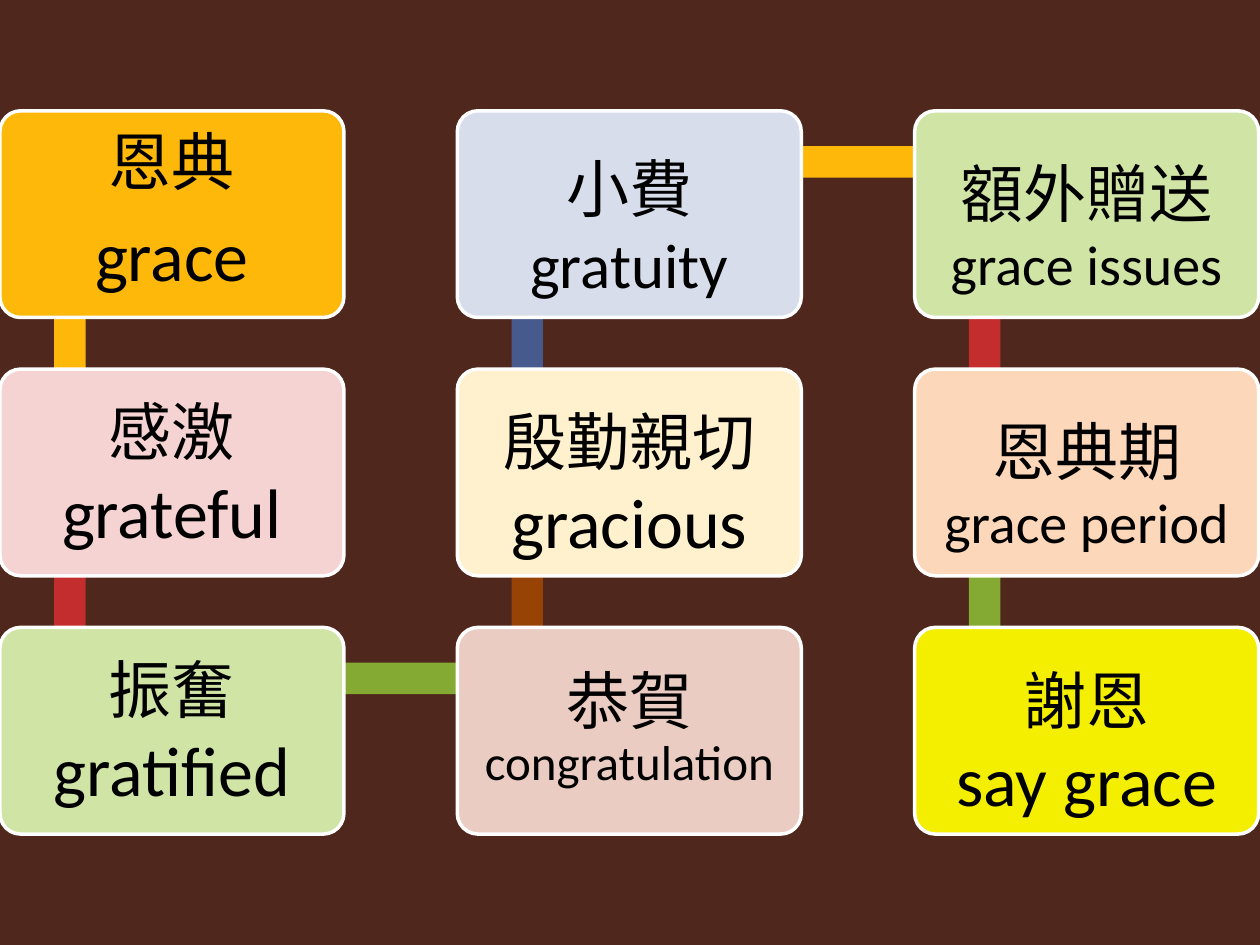
"""Build a slide with a snaking chain of nine word cards."""
from pptx import Presentation
from pptx.dml.color import RGBColor
from pptx.enum.shapes import MSO_SHAPE as SHAPE
from pptx.enum.text import MSO_ANCHOR as ANCHOR, PP_ALIGN as ALIGN
from pptx.util import Inches, Pt


def add_box(kind, x, y, w, h, color):
    sp = s.shapes.add_shape(kind, Inches(x), Inches(y), Inches(w), Inches(h))
    sp.shadow.inherit = False
    sp.fill.solid()
    sp.fill.fore_color.rgb = RGBColor.from_string(color)
    sp.line.fill.background()
    return sp


def add_text(p, text, size=36, font="Calibri", color="000000"):
    r = p.add_run()
    r.text = text
    r.font.size = Pt(size)
    r.font.name = font
    r.font.color.rgb = RGBColor.from_string(color)


LEFT, TOP = 0, 0.88
COL_STEP, ROW_STEP = 3.63, 2.05
CARD_W, CARD_H = 2.73, 1.64
BAR = 0.25

prs = Presentation()
prs.slide_width, prs.slide_height = Inches(10), Inches(7.5)
s = prs.slides.add_slide(prs.slide_layouts[6])
s.background.fill.solid()
s.background.fill.fore_color.rgb = RGBColor.from_string("4F271C")

down_bars = [
    (0, 0, "FEB80A"), (0, 1, "C32D2E"),
    (1, 1, "964305"), (1, 0, "475A8D"),
    (2, 0, "C32D2E"), (2, 1, "84AA33"),
]
for col, row, color in down_bars:
    add_box(SHAPE.RECTANGLE, LEFT + col * COL_STEP + 0.43,
            TOP + row * ROW_STEP + 0.41, BAR, ROW_STEP, color)

across_bars = [(0, 2, "84AA33"), (1, 0, "FEB80A")]
for col, row, color in across_bars:
    add_box(SHAPE.RECTANGLE, LEFT + col * COL_STEP + 0.56,
            TOP + row * ROW_STEP + 0.28, COL_STEP, BAR, color)

# column, row, fill, Chinese, English, English size, drop, line spacing, separate paragraphs
cards = [
    (0, 0, "FEB80A", "恩典", "grace", 40, 0, 0.9, True),
    (0, 1, "F5D3D3", "感激", "grateful", 40, 0, 1, False),
    (0, 2, "D0E4A6", "振奮", "gratified", 40, 0, 1, False),
    (1, 2, "EACCC3", "恭賀", "congratulation", 28, 0, 0.9, False),
    (1, 1, "FFF1CE", "殷勤親切", "gracious", 40, 0.08, 1, False),
    (1, 0, "D7DDEB", "小費", "gratuity", 36, 0.09, 1, False),
    (2, 0, "D0E4A6", "額外贈送", "grace issues", 32, 0.09, 1, False),
    (2, 1, "FDD7BA", "恩典期", "grace period", 32, 0.09, 1, True),
    (2, 2, "F4EE00", "謝恩", "say grace", 40, 0.08, 1, True),
]
for col, row, color, chinese, english, size, drop, spacing, separate in cards:
    sp = add_box(SHAPE.ROUNDED_RECTANGLE, LEFT + col * COL_STEP,
                 TOP + row * ROW_STEP, CARD_W, CARD_H, color)
    sp.adjustments[0] = 0.1
    sp.line.color.rgb = RGBColor.from_string("FFFFFF")
    sp.line.width = Pt(2)
    tf = sp.text_frame
    tf.word_wrap = True
    tf.vertical_anchor = ANCHOR.MIDDLE
    tf.margin_left = tf.margin_right = Inches(0.1)
    tf.margin_top, tf.margin_bottom = Inches(2 * drop), 0
    p = tf.paragraphs[0]
    add_text(p, chinese)
    if separate:
        if spacing < 1:
            p.space_after = Pt(12.6)
        p = tf.add_paragraph()
    else:
        p.add_line_break()
    add_text(p, english, size=size)
    for p in tf.paragraphs:
        p.alignment = ALIGN.CENTER
        p.line_spacing = spacing

prs.save("out.pptx")
